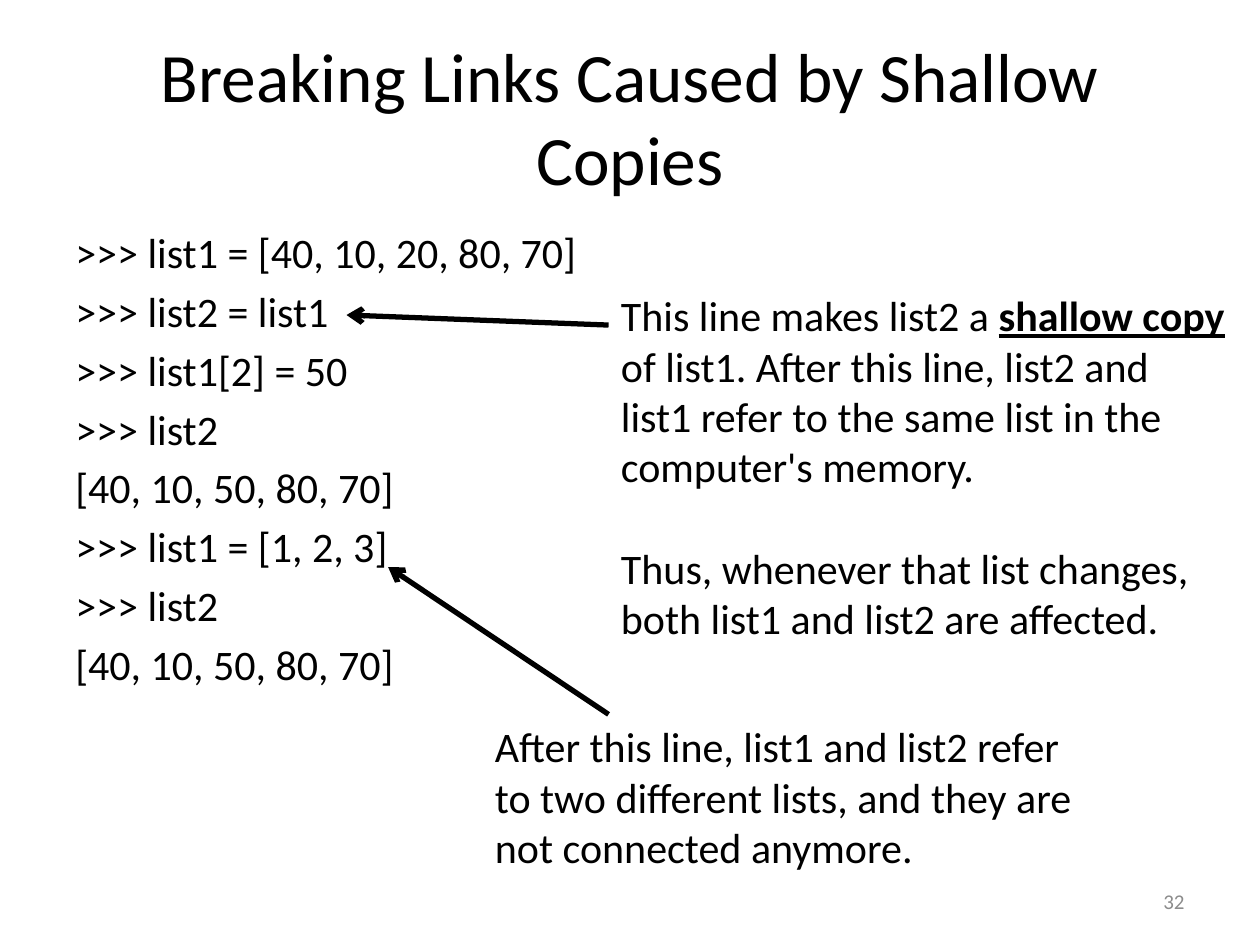
import pptx
import pptx.util
import pptx.dml.color
import pptx.enum.text
import pptx.enum.shapes
import pptx.oxml
import pptx.oxml.ns

Inches = pptx.util.Inches
Pt = pptx.util.Pt
Align = pptx.enum.text.PP_ALIGN
Anchor = pptx.enum.text.MSO_ANCHOR
COLORS = {"ink": "000000", "muted": "8C8C8C"}


class Deck:
    font = "Calibri"
    size = 24

    def __init__(self, wide, high):
        self.prs = pptx.Presentation()
        self.prs.slide_width = Inches(wide)
        self.prs.slide_height = Inches(high)
        self.slide = self.prs.slides.add_slide(self.prs.slide_layouts[6])

    def color(self, name):
        return pptx.dml.color.RGBColor.from_string(COLORS[name])

    def text(self, box, paras, size=None, color="ink", align=Align.LEFT,
             anchor=Anchor.TOP, gap=0):
        shape = self.slide.shapes.add_textbox(*map(Inches, box))
        frame = shape.text_frame
        frame.word_wrap = True
        frame.vertical_anchor = anchor
        for i, runs in enumerate(paras):
            para = frame.add_paragraph() if i else frame.paragraphs[0]
            para.alignment = align
            para.space_before = Pt(gap if i else 0)
            for words, strong in runs:
                run = para.add_run()
                run.text = words
                font = run.font
                font.name = self.font
                font.size = Pt(size or self.size)
                font.bold = font.underline = strong
                font.color.rgb = self.color(color)

    def arrow(self, start, end):
        kind = pptx.enum.shapes.MSO_CONNECTOR.STRAIGHT
        line = self.slide.shapes.add_connector(kind, *map(Inches, start + end))
        line.line.width = Pt(3)
        line.line.color.rgb = self.color("ink")
        head = pptx.oxml.parse_xml(
            f'<a:tailEnd {pptx.oxml.ns.nsdecls("a")} type="arrow"/>')
        line.line._get_or_add_ln().append(head)
        props = line._element.spPr
        props.append(pptx.oxml.parse_xml(
            f'<a:effectLst {pptx.oxml.ns.nsdecls("a")}/>'))


def plain(*lines):
    return [[(line, False)] for line in lines]


def main():
    deck = Deck(10, 7.5)
    deck.text((0.5, 0.3, 9, 1.25),
              plain("Breaking Links Caused by Shallow Copies"),
              size=39.6, align=Align.CENTER, anchor=Anchor.MIDDLE)
    deck.text((0.5, 1.75, 9, 4.95), plain(
        ">>> list1 = [40, 10, 20, 80, 70]",
        ">>> list2 = list1",
        ">>> list1[2] = 50",
        ">>> list2",
        "[40, 10, 50, 80, 70]",
        ">>> list1 = [1, 2, 3]",
        ">>> list2",
        "[40, 10, 50, 80, 70]"), gap=4.8)
    deck.text((7.17, 6.95, 2.33, 0.4), plain("32"), size=12, color="muted",
              align=Align.RIGHT, anchor=Anchor.MIDDLE)

    shallow = [
        ("This line makes list2 a ", False),
        ("shallow copy", True),
        (" of list1. After this line, list2 and list1 refer to the same "
         "list in the computer's memory.", False)]
    effect = plain("Thus, whenever that list changes, both list1 and list2 "
                   "are affected.")
    deck.text((4.83, 2.25, 5, 2.93), [shallow] + effect, gap=29)
    deck.arrow((4.83, 2.58), (2.75, 2.5))
    deck.arrow((4.83, 5.67), (3.08, 4.5))
    deck.text((3.83, 5.67, 5, 1.31), plain(
        "After this line, list1 and list2 refer to two different lists, "
        "and they are not connected anymore."))
    deck.prs.save("out.pptx")


if __name__ == "__main__":
    main()
